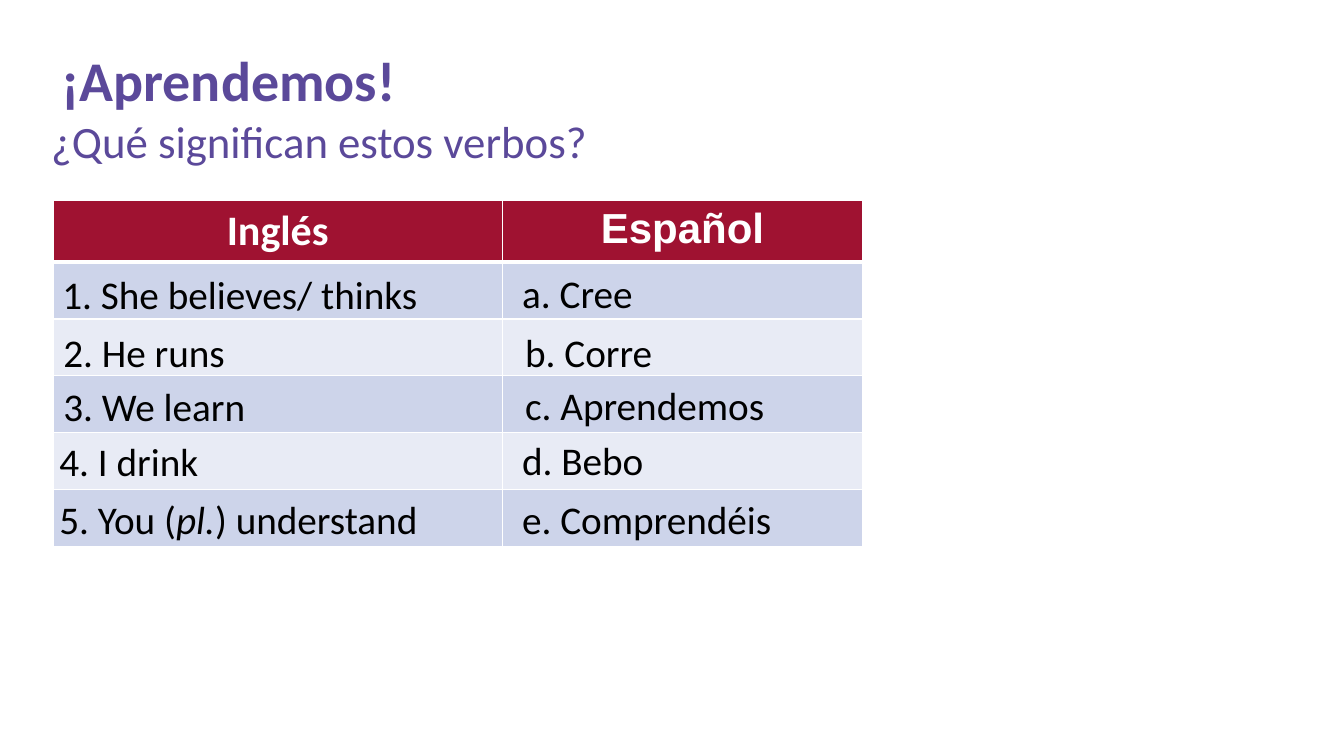
from dataclasses import dataclass

from lxml.etree import SubElement
from pptx import Presentation
from pptx.dml.color import RGBColor
from pptx.enum.text import MSO_ANCHOR as Anchor, MSO_AUTO_SIZE as AutoSize, PP_ALIGN as Align
from pptx.oxml.ns import qn
from pptx.util import Inches, Pt


@dataclass(frozen=True)
class Theme:
    font: str = "Calibri"
    header_font: str = "Arial"
    purple: str = "5B499A"
    red: str = "9F1231"
    bands: tuple = ("CDD4EA", "E8EBF5")
    white: str = "FFFFFF"
    black: str = "000000"
    title_size: int = 40
    question_size: int = 32
    header_size: int = 30
    verb_size: int = 28


theme = Theme()


def style(para, size, color, bold=False, name=theme.font):
    for span in para.runs:
        span.font.name = name
        span.font.size = Pt(size)
        span.font.bold = bold
        span.font.color.rgb = RGBColor.from_string(color)


def paint_cell(cell, fill, bottom_width):
    properties = cell._tc.get_or_add_tcPr()
    for side, width in (("L", 1), ("R", 1), ("T", 1), ("B", bottom_width)):
        line = SubElement(properties, qn(f"a:ln{side}"), w=str(Pt(width)))
        solid = SubElement(line, qn("a:solidFill"))
        SubElement(solid, qn("a:srgbClr"), val=theme.white)
    cell.fill.solid()
    cell.fill.fore_color.rgb = RGBColor.from_string(fill)


deck = Presentation()
deck.slide_width, deck.slide_height = Inches(13.33), Inches(7.5)
page = deck.slides.add_slide(deck.slide_layouts[5])

title = page.shapes.title
title.left, title.top = Inches(0.51), Inches(0.4)
title.width, title.height = Inches(11.5), Inches(0.68)
title.text_frame.text = "¡Aprendemos!"
title.text_frame.auto_size = AutoSize.NONE
title.text_frame.vertical_anchor = Anchor.TOP
title.text_frame.paragraphs[0].alignment = Align.LEFT
style(title.text_frame.paragraphs[0], theme.title_size, theme.purple, bold=True)

question = page.shapes.add_textbox(Inches(0.41), Inches(1.08), Inches(13.01), Inches(1.23))
question.text_frame.word_wrap = True
question.text_frame.text = "¿Qué significan estos verbos?"
style(question.text_frame.paragraphs[0], theme.question_size, theme.purple)

table_height, header_height, verb_rows = 3.43, 0.61, 5
frame = page.shapes.add_table(verb_rows + 1, 2, Inches(0.53), Inches(1.99), Inches(8.03), Inches(table_height))
table = frame.table
table.columns[0].width, table.columns[1].width = Inches(4.45), Inches(3.58)
for index, row in enumerate(table.rows):
    is_header = index == 0
    row.height = Inches(header_height if is_header else (table_height - header_height) / verb_rows)
    for cell in row.cells:
        cell.margin_left = cell.margin_right = Inches(0.08)
        paint_cell(cell, theme.red if is_header else theme.bands[(index - 1) % 2], 3 if is_header else 1)

headers = (("Inglés", theme.font), ("Español", theme.header_font))
for cell, (label, font) in zip(table.rows[0].cells, headers):
    cell.text_frame.text = label
    para = cell.text_frame.paragraphs[0]
    para.alignment = Align.CENTER
    style(para, theme.header_size, theme.white, bold=True, name=font)

verbs = (
    (0.52, 2.63, 4.45, ("1. She believes/ thinks",)),
    (0.53, 3.21, 4.19, ("2. He runs",)),
    (0.53, 3.74, 4.19, ("3. We learn",)),
    (0.49, 4.29, 2.72, ("4. I drink",)),
    (0.49, 4.86, 4.58, ("5. You (", "pl.", ") understand")),
    (5.08, 2.62, 3.31, ("a. Cree",)),
    (5.11, 3.21, 3.31, ("b. Corre",)),
    (5.11, 3.73, 2.65, ("c. Aprendemos",)),
    (5.08, 4.28, 3.48, ("d. Bebo",)),
    (5.08, 4.86, 3.09, ("e. Comprendéis",)),
)
for left, top, width, pieces in verbs:
    box = page.shapes.add_textbox(Inches(left), Inches(top), Inches(width), Inches(0.57))
    box.text_frame.word_wrap = True
    box.text_frame.auto_size = AutoSize.SHAPE_TO_FIT_TEXT
    para = box.text_frame.paragraphs[0]
    for piece in pieces:
        span = para.add_run()
        span.text = piece
        span.font.italic = piece == "pl."
    style(para, theme.verb_size, theme.black)

deck.save("out.pptx")
